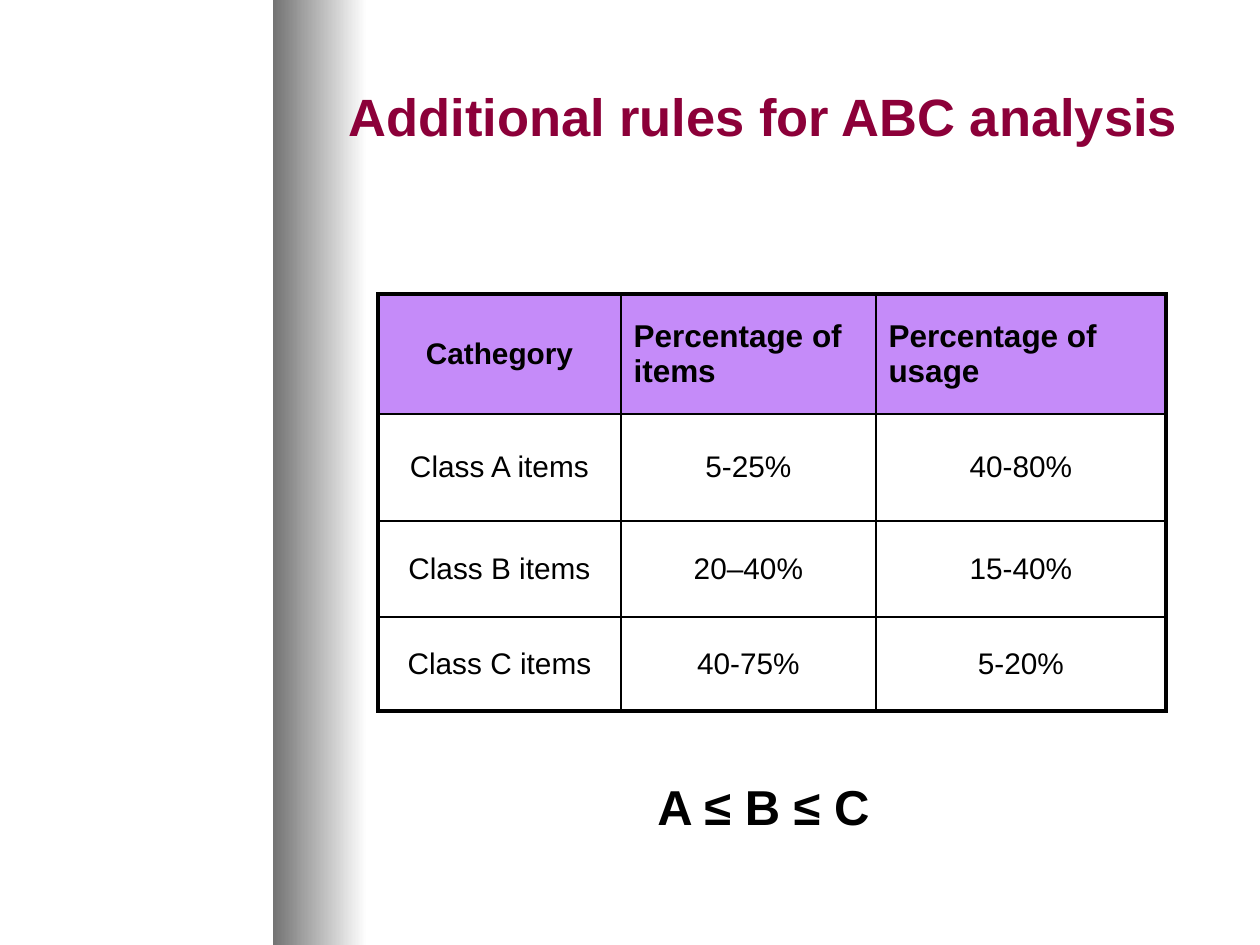
from dataclasses import dataclass

from pptx import Presentation
from pptx.dml.color import RGBColor
from pptx.enum.shapes import MSO_SHAPE
from pptx.enum.text import MSO_ANCHOR, MSO_AUTO_SIZE, PP_ALIGN
from pptx.oxml.xmlchemy import OxmlElement
from pptx.util import Emu, Pt

PX_PER_INCH = 126


@dataclass(frozen=True)
class Theme:
    font: str = "Arial"
    title_color: str = "8C0039"
    text_color: str = "000000"
    header_fill: str = "C58BF9"
    band_start: str = "737373"
    band_end: str = "FFFFFF"
    title_size: int = 30
    header_size: int = 18
    cell_size: int = 17
    formula_size: int = 28
    outer_line: float = 2.25
    inner_line: float = 1


THEME = Theme()
COLUMN_WIDTHS = [243, 255, 290]
ROW_HEIGHTS = [120, 107, 96, 94]
ROWS = [
    ["Cathegory", "Percentage of items", "Percentage of usage"],
    ["Class A items", "5-25%", "40-80%"],
    ["Class B items", "20–40%", "15-40%"],
    ["Class C items", "40-75%", "5-20%"],
]


def px(value):
    return Emu(round(value * 914400 / PX_PER_INCH))


def place(shape, left, top, width, height):
    frame = {"left": left, "top": top, "width": width, "height": height}
    for name, value in frame.items():
        setattr(shape, name, px(value))


def write(text_frame, text, size, color, bold, align, space_before=0):
    paragraph = text_frame.paragraphs[0]
    paragraph.alignment = align
    if space_before:
        spacing = OxmlElement("a:spcBef")
        percent = OxmlElement("a:spcPct")
        percent.set("val", str(space_before * 1000))
        spacing.append(percent)
        paragraph._p.get_or_add_pPr().append(spacing)
    span = paragraph.add_run()
    span.text = text
    style = {"name": THEME.font, "size": Pt(size), "bold": bold}
    for name, value in style.items():
        setattr(span.font, name, value)
    span.font.color.rgb = RGBColor.from_string(color)


def add_band(page):
    band = page.shapes.add_shape(MSO_SHAPE.RECTANGLE, px(273), 0, px(94), px(945))
    band.shadow.inherit = False
    band.line.fill.background()
    band.fill.gradient()
    band.fill.gradient_angle = 0
    for stop, color in zip(band.fill.gradient_stops, [THEME.band_start, THEME.band_end]):
        stop.color.rgb = RGBColor.from_string(color)


def add_title(page, text):
    title = page.shapes.title
    place(title, 336, 32, 882, 168)
    title.text_frame.word_wrap = True
    title.text_frame.vertical_anchor = MSO_ANCHOR.MIDDLE
    write(title.text_frame, text, THEME.title_size, THEME.title_color, True, PP_ALIGN.LEFT)


def set_border(cell, side, width):
    line = OxmlElement(f"a:ln{side}")
    line.set("w", str(Pt(width)))
    fill = OxmlElement("a:solidFill")
    color = OxmlElement("a:srgbClr")
    color.set("val", THEME.text_color)
    fill.append(color)
    line.append(fill)
    cell._tc.get_or_add_tcPr().append(line)


def format_cell(cell, text, row, column):
    on_edge = {
        "L": column == 0,
        "R": column == len(COLUMN_WIDTHS) - 1,
        "T": row == 0,
        "B": row == len(ROWS) - 1,
    }
    for side, outer in on_edge.items():
        set_border(cell, side, THEME.outer_line if outer else THEME.inner_line)
    header = row == 0
    if header:
        cell.fill.solid()
        cell.fill.fore_color.rgb = RGBColor.from_string(THEME.header_fill)
    else:
        cell.fill.background()
    cell.vertical_anchor = MSO_ANCHOR.MIDDLE
    measure_header = header and column > 0
    size = THEME.header_size if measure_header else THEME.cell_size
    align = PP_ALIGN.LEFT if measure_header else PP_ALIGN.CENTER
    write(cell.text_frame, text, size, THEME.text_color, header, align, 20)


def add_class_table(page):
    table = page.shapes.add_table(
        len(ROWS), len(COLUMN_WIDTHS), px(378), px(294),
        px(sum(COLUMN_WIDTHS)), px(sum(ROW_HEIGHTS)),
    ).table
    table.first_row = False
    table.horz_banding = False
    for column, width in zip(table.columns, COLUMN_WIDTHS):
        column.width = px(width)
    for row, height in zip(table.rows, ROW_HEIGHTS):
        row.height = px(height)
    for row, texts in enumerate(ROWS):
        for column, text in enumerate(texts):
            format_cell(table.cell(row, column), text, row, column)


def add_formula(page, text):
    box = page.shapes.add_textbox(px(441), px(770), px(645), px(72))
    box.text_frame.word_wrap = True
    box.text_frame.auto_size = MSO_AUTO_SIZE.SHAPE_TO_FIT_TEXT
    write(box.text_frame, text, THEME.formula_size, THEME.text_color, True, PP_ALIGN.CENTER, 50)


def main():
    deck = Presentation()
    deck.slide_width, deck.slide_height = px(1260), px(945)
    page = deck.slides.add_slide(deck.slide_layouts[5])
    add_band(page)
    title = page.shapes.title
    page.shapes._spTree.append(title._element)
    add_title(page, "Additional rules for ABC analysis")
    add_class_table(page)
    add_formula(page, "A ≤ B ≤ C")
    deck.save("out.pptx")


if __name__ == "__main__":
    main()
